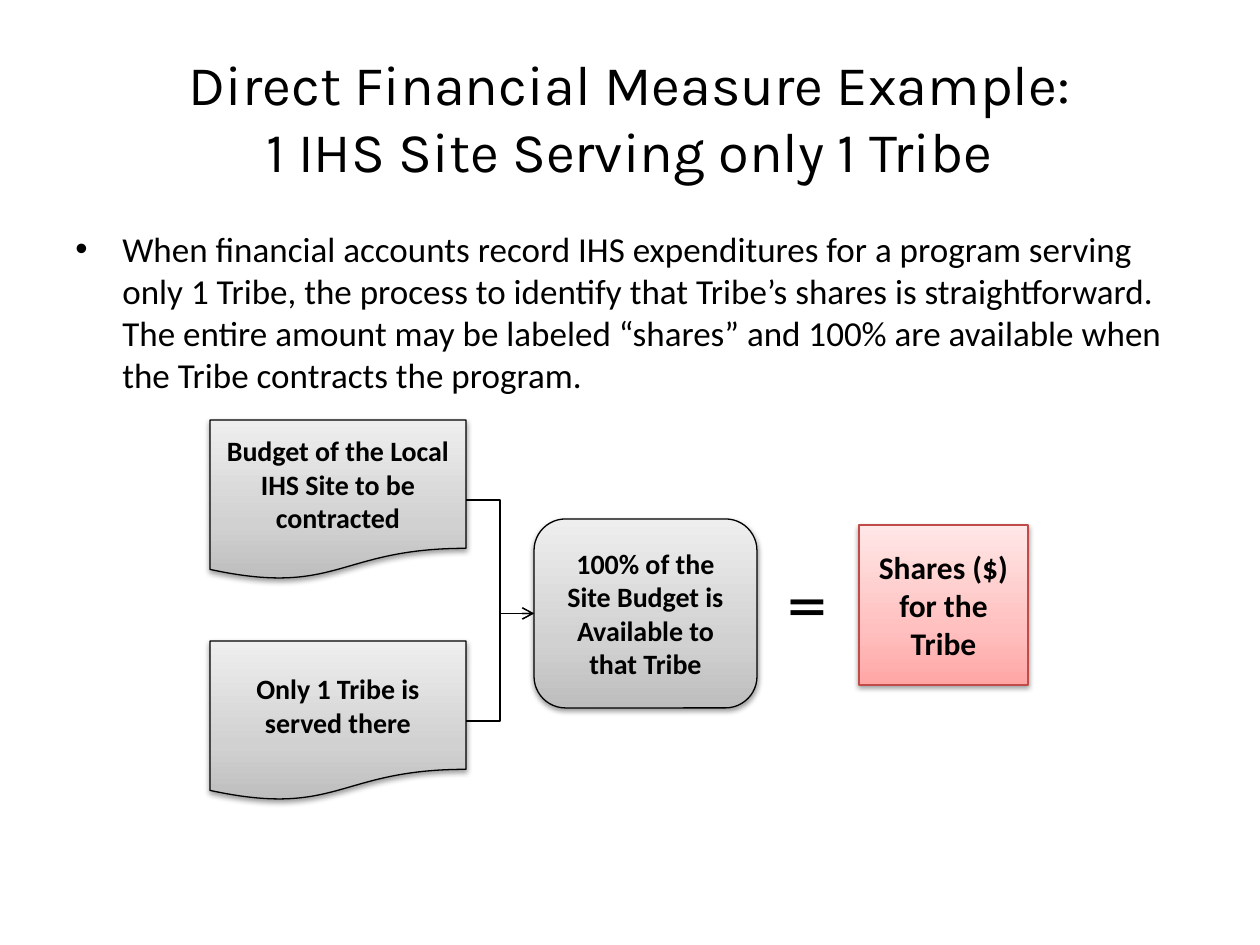
from copy import deepcopy

from lxml import etree
from pptx import Presentation
from pptx.dml.color import RGBColor
from pptx.enum.shapes import MSO_CONNECTOR, MSO_SHAPE
from pptx.enum.text import MSO_ANCHOR, PP_ALIGN
from pptx.oxml.ns import qn
from pptx.util import Pt

DOCUMENT = MSO_SHAPE.FLOWCHART_DOCUMENT
ROUNDED = MSO_SHAPE.ROUNDED_RECTANGLE
RECTANGLE = MSO_SHAPE.RECTANGLE
ELBOW = MSO_CONNECTOR.ELBOW
CENTER, LEFT = PP_ALIGN.CENTER, PP_ALIGN.LEFT
MIDDLE, TOP = MSO_ANCHOR.MIDDLE, MSO_ANCHOR.TOP
LEFT_SITE, RIGHT_SITE = 1, 3
EMU_PER_PX = 914400 / 126
TITLE_ONLY = 5

COLORS = {
    "black": "000000",
    "red line": "BF4C48",
    "gray": ("BDBDBD", "D1D1D1", "EEEEEE"),
    "red": ("FFA6A5", "FFC0BF", "FFE7E7"),
}
STOPS = (0, 0.35, 1)


def px(*lengths):
    """Turn pixel lengths into EMU."""
    return [round(length * EMU_PER_PX) for length in lengths]


def rgb(name):
    """Look up a plain colour by name."""
    return RGBColor.from_string(COLORS[name])


class FlowSlide:
    """Hold the style and the current slide, and add its elements."""

    def __init__(self, slide, font="Calibri"):
        """Keep the slide and its main font."""
        self.slide = slide
        self.font = font

    def set_text(self, frame, lines, size, font=None, bold=False, align=CENTER, anchor=MIDDLE):
        """Fill one paragraph with a line break between lines."""
        frame.word_wrap = True
        frame.vertical_anchor = anchor
        paragraph = frame.paragraphs[0]
        paragraph.alignment = align
        for number, line in enumerate(lines):
            if number:
                paragraph.add_line_break()
            run = paragraph.add_run()
            run.text = line
            run.font.name = font or self.font
            run.font.size = Pt(size)
            run.font.bold = bold
            run.font.color.rgb = rgb("black")
        return paragraph

    def title(self, box, lines):
        """Place and fill the title placeholder."""
        heading = self.slide.shapes.title
        heading.left, heading.top, heading.width, heading.height = px(*box)
        self.set_text(heading.text_frame, lines, 32, "Karla")

    def text(self, box, words, size, font=None):
        """Add a left-aligned text box and return its paragraph."""
        frame = self.slide.shapes.add_textbox(*px(*box)).text_frame
        return self.set_text(frame, [words], size, font, align=LEFT, anchor=TOP)

    def bullet(self, box, words):
        """Add a bulleted paragraph with a hanging indent."""
        paragraph = self.text(box, words, 20)
        paragraph.space_before = Pt(4)
        indent, = px(47)
        properties = paragraph._p.get_or_add_pPr()
        properties.set("marL", str(indent))
        properties.set("indent", str(-indent))
        etree.SubElement(properties, qn("a:buFont"), typeface="Arial")
        etree.SubElement(properties, qn("a:buChar"), char="•")

    def node(self, kind, box, words, size=16, fill="gray", line="black"):
        """Add a shaded flow chart shape with a soft shadow."""
        shape = self.slide.shapes.add_shape(kind, *px(*box))
        shape.fill.gradient()
        shape.fill.gradient_angle = 90
        properties = shape._element.spPr
        stop_list = properties.find(".//" + qn("a:gsLst"))
        stop_list.append(deepcopy(stop_list[0]))
        for stop, position, shade in zip(shape.fill.gradient_stops, STOPS, COLORS[fill]):
            stop.position = position
            stop.color.rgb = RGBColor.from_string(shade)
        shape.line.color.rgb = rgb(line)
        shape.line.width = Pt(0.75)
        shape.shadow.inherit = False
        shadow = etree.SubElement(
            properties.find(qn("a:effectLst")), qn("a:outerShdw"),
            blurRad="40000", dist="20000", dir="5400000", rotWithShape="0")
        tint = etree.SubElement(shadow, qn("a:srgbClr"), val=COLORS["black"])
        etree.SubElement(tint, qn("a:alpha"), val="38000")
        self.set_text(shape.text_frame, [words], size, bold=True)
        return shape

    def arrow(self, source, target):
        """Join two shapes with an elbow arrow."""
        link = self.slide.shapes.add_connector(ELBOW, 0, 0, 0, 0)
        link.begin_connect(source, RIGHT_SITE)
        link.end_connect(target, LEFT_SITE)
        link.line.color.rgb = rgb("black")
        link.line.width = Pt(0.75)
        properties = link._element.spPr
        etree.SubElement(properties.find(qn("a:ln")), qn("a:tailEnd"), type="arrow")
        etree.SubElement(properties, qn("a:effectLst"))


def main():
    """Build and save the slide."""
    deck = Presentation()
    deck.slide_width, deck.slide_height = px(1260, 945)
    page = FlowSlide(deck.slides.add_slide(deck.slide_layouts[TITLE_ONLY]))
    page.title((63, 38, 1134, 158),
               ["Direct Financial Measure Example:", "1 IHS Site Serving only 1 Tribe"])
    page.bullet(
        (63, 221, 1134, 624),
        "When financial accounts record IHS expenditures for a program serving only 1 Tribe, "
        "the process to identify that Tribe’s shares is straightforward.  The entire amount "
        "may be labeled “shares” and 100% are available when the Tribe contracts the program.")
    available = page.node(ROUNDED, (534, 519, 223, 189),
                          "100% of the Site Budget is Available to that Tribe")
    page.node(RECTANGLE, (859, 525, 169, 160), "Shares ($) for the Tribe",
              18, "red", "red line")
    inputs = ("Budget of the Local IHS Site to be contracted", "Only 1 Tribe is served there")
    sources = [page.node(DOCUMENT, (210, 420 + 221 * row, 256, 160), words)
               for row, words in enumerate(inputs)]
    page.text((776, 554, 78, 89), "=", 36, "TeX Gyre Bonum")
    for source in sources:
        page.arrow(source, available)
    deck.save("out.pptx")


if __name__ == "__main__":
    main()
